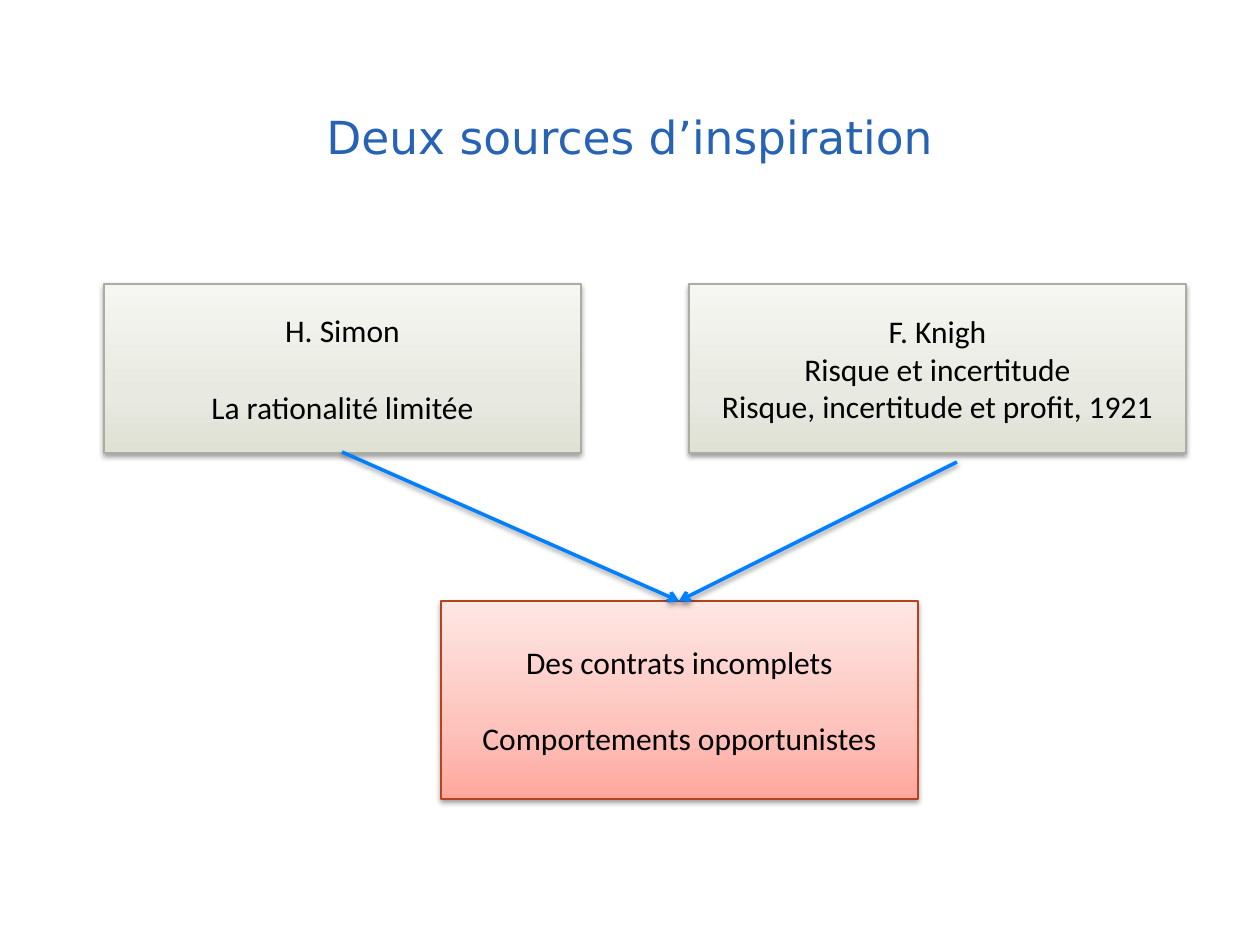
import copy

import pptx
import pptx.dml.color
import pptx.enum.shapes
import pptx.enum.text
import pptx.oxml
import pptx.oxml.ns
import pptx.util

EMU_PER_PX = 914400 / 126
COLORS = {
    "title": "2663B4", "text": "000000", "shadow": "000000", "arrow": "0080FF",
    "source_line": "ABADA1", "result_line": "B5441D",
}
# Gradient stops from the bottom of a box to its top
GRADIENTS = {
    "source": ["DFE1D4", "E8E9E0", "F6F7F3"],
    "result": ["FFA79D", "FDC2BB", "FFE7E4"],
}
STOP_POSITIONS = [0, 0.35, 1]
BLANK_LINE = pptx.util.Pt(22)


def px(value):
    return pptx.util.Emu(round(value * EMU_PER_PX))


def rgb(hex_string):
    return pptx.dml.color.RGBColor.from_string(hex_string)


def set_attributes(target, values):
    for name, value in values.items():
        setattr(target, name, value)


def fill_text(shape, lines, font_name, size, color, gap=0):
    frame = shape.text_frame
    set_attributes(frame, {
        "word_wrap": True,
        "vertical_anchor": pptx.enum.text.MSO_ANCHOR.MIDDLE,
    })
    for index, line in enumerate(lines):
        paragraph = frame.add_paragraph() if index else frame.paragraphs[0]
        paragraph.alignment = pptx.enum.text.PP_ALIGN.CENTER
        if index and gap:
            paragraph.space_before = gap
        run = paragraph.add_run()
        run.text = line
        set_attributes(run.font, {"name": font_name, "size": pptx.util.Pt(size)})
        run.font.color.rgb = rgb(color)


def add_shadow(shape):
    properties = shape._element.spPr
    effects = properties.find(pptx.oxml.ns.qn("a:effectLst"))
    if effects is not None:
        properties.remove(effects)
    properties.append(pptx.oxml.parse_xml(
        f'<a:effectLst {pptx.oxml.ns.nsdecls("a")}>'
        '<a:outerShdw blurRad="39370" dist="20320" dir="5400000" rotWithShape="0">'
        f'<a:srgbClr val="{COLORS["shadow"]}"><a:alpha val="38000"/></a:srgbClr>'
        '</a:outerShdw></a:effectLst>'))


def set_gradient(shape, stop_colors):
    fill = shape.fill
    fill.gradient()
    fill.gradient_angle = 90
    stop_list = shape._element.spPr.find(".//" + pptx.oxml.ns.qn("a:gsLst"))
    stop_list.append(copy.deepcopy(stop_list[0]))
    for stop, position, color in zip(fill.gradient_stops, STOP_POSITIONS, stop_colors):
        stop.position = position
        stop.color.rgb = rgb(color)


def add_title(slide, text, left, top, width, height):
    title = slide.shapes.add_textbox(px(left), px(top), px(width), px(height))
    fill_text(title, [text], "DejaVu Sans", 26, COLORS["title"])


def add_box(slide, kind, lines, left, top, width, height, gap=0):
    box = slide.shapes.add_shape(
        pptx.enum.shapes.MSO_SHAPE.RECTANGLE, px(left), px(top), px(width), px(height))
    set_gradient(box, GRADIENTS[kind])
    box.line.color.rgb = rgb(COLORS[kind + "_line"])
    box.line.width = pptx.util.Pt(0.75)
    add_shadow(box)
    fill_text(box, lines, "Calibri", 18, COLORS["text"], gap)


def add_arrow(slide, start, end):
    arrow = slide.shapes.add_connector(
        pptx.enum.shapes.MSO_CONNECTOR.STRAIGHT, *map(px, start + end))
    arrow.line.color.rgb = rgb(COLORS["arrow"])
    arrow.line.width = pptx.util.Pt(2)
    arrow.line._get_or_add_ln().append(pptx.oxml.parse_xml(
        f'<a:tailEnd {pptx.oxml.ns.nsdecls("a")} type="arrow"/>'))
    add_shadow(arrow)


def main():
    presentation = pptx.Presentation()
    set_attributes(presentation, {"slide_width": px(1260), "slide_height": px(945)})
    slide = presentation.slides.add_slide(presentation.slide_layouts[6])

    add_title(slide, "Deux sources d’inspiration", 63, 78, 1134, 117)

    # The two sources
    add_box(slide, "source", ["H. Simon", "La rationalité limitée"],
            104, 284, 477, 169, BLANK_LINE)
    add_box(slide, "source",
            ["F. Knigh", "Risque et incertitude", "Risque, incertitude et profit, 1921"],
            689, 284, 497, 169)

    # What follows from them
    add_box(slide, "result", ["Des contrats incomplets", "Comportements opportunistes"],
            441, 601, 477, 198, BLANK_LINE)

    # Arrows from the sources to the result
    for start in [(342, 452), (957, 462)]:
        add_arrow(slide, start, (679, 601))

    presentation.save("out.pptx")


if __name__ == "__main__":
    main()
